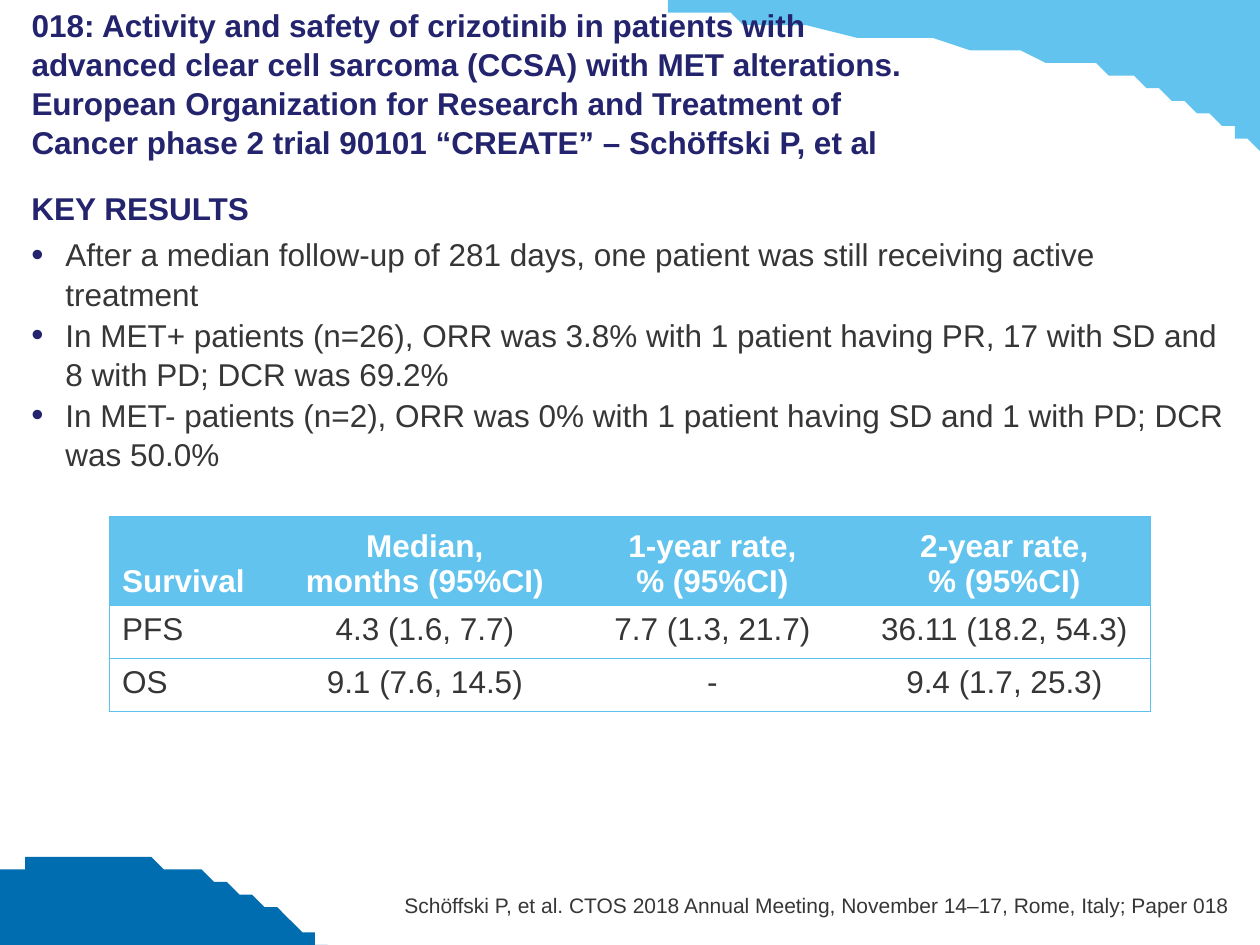
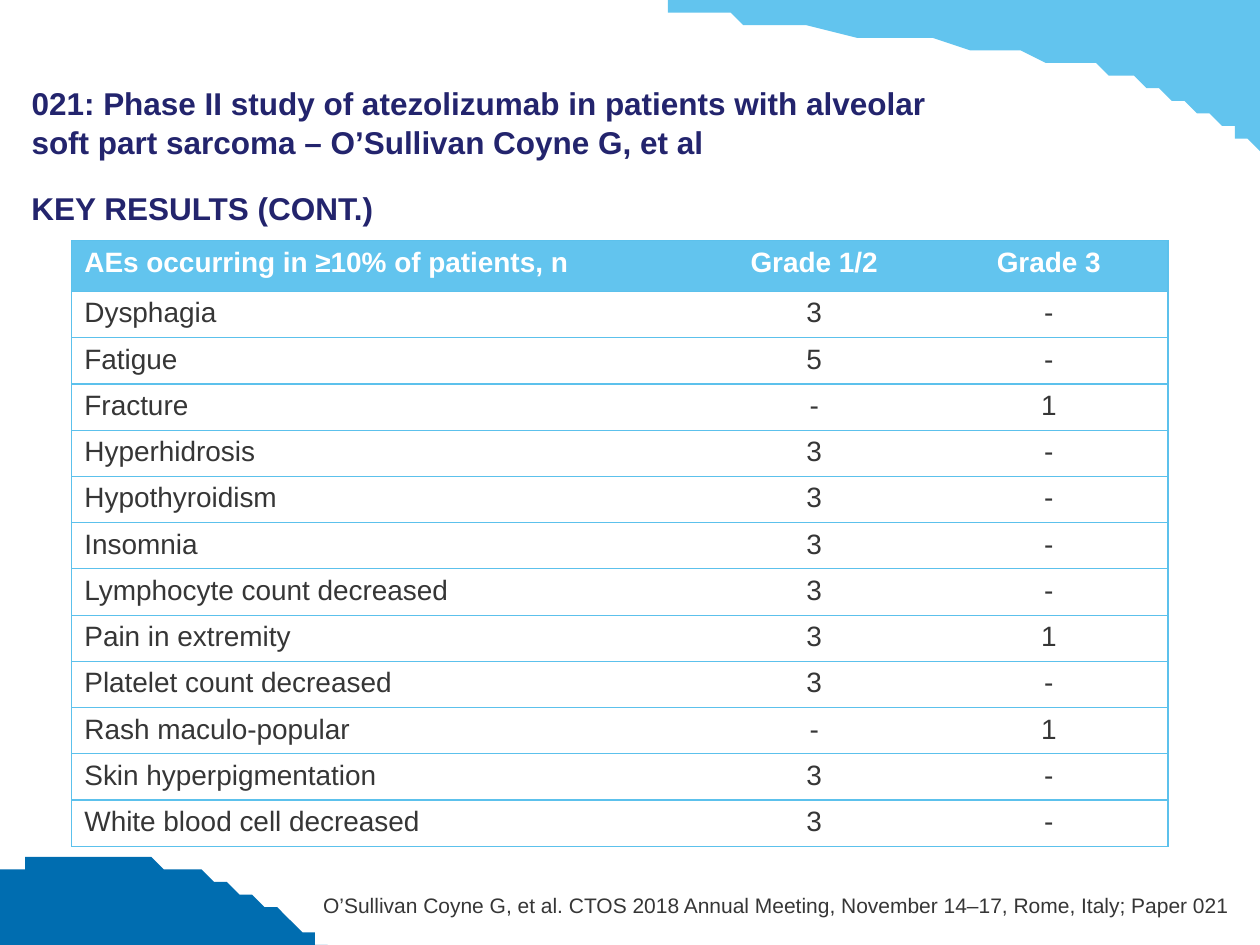
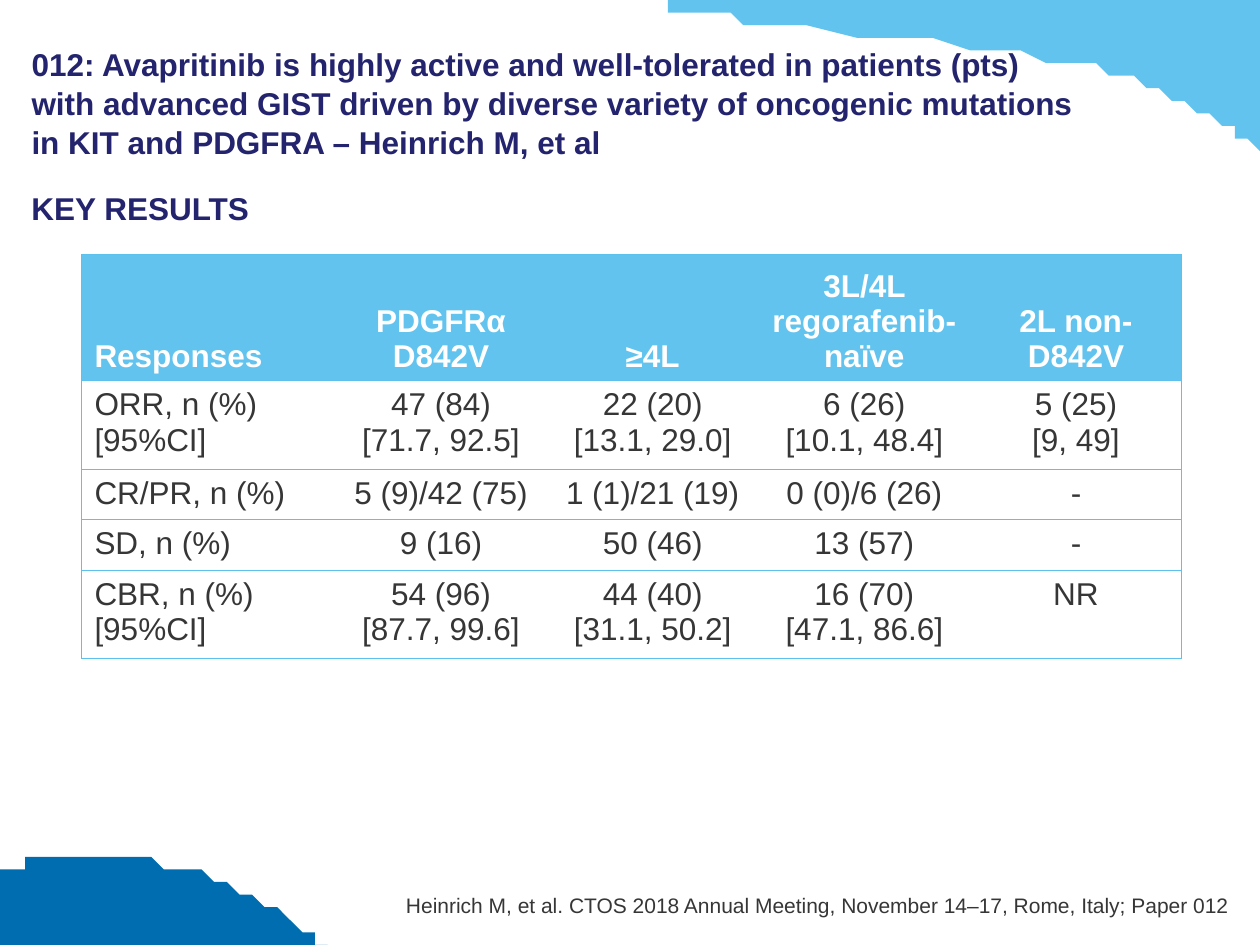
from dataclasses import dataclass

import pptx
import pptx.dml.color
import pptx.enum.text
import pptx.oxml
import pptx.oxml.ns
import pptx.util

ALIGN = pptx.enum.text.PP_ALIGN
ANCHOR = pptx.enum.text.MSO_ANCHOR

# The slide is a grid of 100 columns by 75 rows
COLUMNS, ROWS = 100, 75
UNIT = pptx.util.Inches(0.1)


@dataclass(frozen=True)
class Theme:
    font: str = "Arial"
    heading: str = "23246D"
    text: str = "363636"
    light: str = "FFFFFF"
    sky: str = "62C4EE"
    ocean: str = "006DB0"
    rule: str = "5CC1EC"
    rule_width: float = 0.75
    body_size: int = 18
    dense_size: int = 16
    footer_size: int = 12
    leading: float = 1.04


@dataclass(frozen=True)
class Box:
    """A rectangle in grid columns and rows."""
    left: float
    top: float
    width: float
    height: float

    def emu(self):
        return [round(v * UNIT) for v in (self.left, self.top, self.width, self.height)]


THEME = Theme()
FOOTER_BOX = Box(22.6, 70.8, 75, 2)
BODY_BOX = Box(2.5, 14.4, 95, 58.1)
TITLE_BOX = Box(2.5, 2.5, 73.1, 10.3)
WIDE_TITLE_BOX = Box(2.5, 2.5, 83.9, 10.3)

# Outlines relative to their box: one point is a line, three are a curve
UPPER_BOX = Box(51.5, 0, 48.5, 11.9)
UPPER_WAVE = [
    [(48.5, 0)], [(48.5, 11.9)], [(47.8, 11.2)],
    [(47.4, 10.9), (47.1, 10.6), (46.7, 10.3)],
    [(40.2, 6.2), (34.9, 4.3), (9.3, 1.8)],
    [(6.2, 1.5), (3.4, 0.9), (0.8, 0.2)],
]
LOWER_BOX = Box(0, 67.7, 25.5, 7.3)
LOWER_WAVE = [
    [(14.5, -0.2), (21.8, 4.2), (25.2, 7)],
    [(25.5, 7.3)], [(0, 7.3)], [(0, 1.5)], [(0.9, 1.1)],
    [(2.8, 0.4), (4.8, 0), (6.7, 0)],
]


def rgb(colour):
    return pptx.dml.color.RGBColor.from_string(colour)


def format_runs(paragraph, size, colour, bold=False):
    for run in paragraph.runs:
        run.font.name = THEME.font
        run.font.size = pptx.util.Pt(size)
        run.font.bold = bold
        run.font.color.rgb = rgb(colour)


def set_frame(frame, anchor, top=0.0, bottom=0.0):
    frame.word_wrap = True
    frame.auto_size = pptx.enum.text.MSO_AUTO_SIZE.NONE
    frame.vertical_anchor = anchor
    frame.margin_left = frame.margin_right = 0
    frame.margin_top = pptx.util.Inches(top)
    frame.margin_bottom = pptx.util.Inches(bottom)


# Shared bands
def trace(start, segments, steps=20):
    """Turn lines and cubic curves into points."""
    points = [start]
    for segment in segments:
        if len(segment) == 1:
            points += segment
            continue
        controls = [points[-1], *segment]
        for step in range(1, steps + 1):
            t = step / steps
            weights = ((1 - t) ** 3, 3 * t * (1 - t) ** 2, 3 * t * t * (1 - t), t ** 3)
            points.append(tuple(sum(w * c[axis] for w, c in zip(weights, controls))
                                for axis in (0, 1)))
    return points


def add_wave(slide, box, start, segments, colour):
    """Draw a band and move it to the layout, behind the title."""
    points = [(box.left + x, box.top + y) for x, y in trace(start, segments)]
    builder = slide.shapes.build_freeform(*points[0], scale=float(UNIT))
    builder.add_line_segments(points[1:], close=True)
    wave = builder.convert_to_shape()
    wave.shadow.inherit = False
    wave.fill.solid()
    wave.fill.fore_color.rgb = rgb(colour)
    wave.line.fill.background()
    slide.slide_layout.shapes.element.insert(2, wave._element)


# Text regions
def add_title(slide, box, wording):
    title = slide.shapes.title
    title.left, title.top, title.width, title.height = box.emu()
    set_frame(title.text_frame, ANCHOR.BOTTOM, top=0.05)
    title.text_frame.text = wording
    paragraph = title.text_frame.paragraphs[0]
    paragraph.alignment = ALIGN.LEFT
    paragraph.line_spacing = THEME.leading
    format_runs(paragraph, THEME.body_size, THEME.heading, bold=True)


def add_bullet(paragraph):
    properties = paragraph._p.get_or_add_pPr()
    indent = pptx.util.Inches(0.27)
    properties.set("marL", str(indent))
    properties.set("indent", str(-indent))
    namespace = pptx.oxml.ns.nsdecls("a")
    for xml in (f'<a:buClr {namespace}><a:srgbClr val="{THEME.heading}"/></a:buClr>',
                f'<a:buSzPct {namespace} val="110000"/>',
                f'<a:buFont {namespace} typeface="{THEME.font}"/>',
                f'<a:buChar {namespace} char="•"/>'):
        properties.append(pptx.oxml.parse_xml(xml))


def add_findings(slide, box, heading, findings):
    frame = slide.shapes.add_textbox(*box.emu()).text_frame
    set_frame(frame, ANCHOR.TOP, top=0.05, bottom=0.05)
    frame.text = "\n".join([heading, *findings])
    for index, paragraph in enumerate(frame.paragraphs):
        is_heading = index == 0
        paragraph.line_spacing = THEME.leading
        paragraph.space_after = pptx.util.Pt(4 if is_heading else 1)
        format_runs(paragraph, THEME.body_size,
                    THEME.heading if is_heading else THEME.text, bold=is_heading)
        if not is_heading:
            add_bullet(paragraph)


def add_citation(slide, box, authors, paper):
    frame = slide.shapes.add_textbox(*box.emu()).text_frame
    set_frame(frame, ANCHOR.BOTTOM)
    frame.text = (f"{authors}, et al. CTOS 2018 Annual Meeting, "
                  f"November 14–17, Rome, Italy; Paper {paper}")
    frame.paragraphs[0].alignment = ALIGN.RIGHT
    format_runs(frame.paragraphs[0], THEME.footer_size, THEME.text)


# Tables
def set_borders(cell, visible):
    properties = cell._tc.get_or_add_tcPr()
    for side in "LRTB":
        paint = (f'<a:solidFill><a:srgbClr val="{THEME.rule}"/></a:solidFill>'
                 if side in visible else "<a:noFill/>")
        properties.append(pptx.oxml.parse_xml(
            f'<a:ln{side} {pptx.oxml.ns.nsdecls("a")} '
            f'w="{pptx.util.Pt(THEME.rule_width)}">{paint}</a:ln{side}>'))


def format_cell(cell, wording, is_header, is_first, is_last, size):
    set_borders(cell, "TB" + "L" * is_first + "R" * is_last)
    if is_header:
        cell.fill.solid()
        cell.fill.fore_color.rgb = rgb(THEME.sky)
    else:
        cell.fill.background()
    cell.vertical_anchor = ANCHOR.BOTTOM if is_header and size == THEME.body_size else ANCHOR.TOP
    paragraph = cell.text_frame.paragraphs[0]
    paragraph.text = wording
    paragraph.alignment = ALIGN.LEFT if is_first else ALIGN.CENTER
    format_runs(paragraph, size, THEME.light if is_header else THEME.text, bold=is_header)


def add_results(slide, box, rows, column_weights, row_weights, size):
    """Share the box among columns and rows by weight."""
    grid = slide.shapes.add_table(len(rows), len(column_weights), *box.emu()).table
    for column, weight in zip(grid.columns, column_weights):
        column.width = round(box.width * UNIT * weight / sum(column_weights))
    for row, weight in zip(grid.rows, row_weights):
        row.height = round(box.height * UNIT * weight / sum(row_weights))
    last = len(column_weights) - 1
    for r, row in enumerate(rows):
        for c, wording in enumerate(row):
            format_cell(grid.cell(r, c), wording, r == 0, c == 0, c == last, size)


# Content
SURVIVAL = [
    ("Survival", "Median,\nmonths (95%CI)", "1-year rate,\n% (95%CI)", "2-year rate,\n% (95%CI)"),
    ("PFS", "4.3 (1.6, 7.7)", "7.7 (1.3, 21.7)", "36.11 (18.2, 54.3)"),
    ("OS", "9.1 (7.6, 14.5)", "-", "9.4 (1.7, 25.3)"),
]
ADVERSE_EVENTS = [
    ("AEs occurring in ≥10% of patients, n", "Grade 1/2", "Grade 3"),
    ("Dysphagia", "3", "-"),
    ("Fatigue", "5", "-"),
    ("Fracture", "-", "1"),
    ("Hyperhidrosis", "3", "-"),
    ("Hypothyroidism", "3", "-"),
    ("Insomnia", "3", "-"),
    ("Lymphocyte count decreased", "3", "-"),
    ("Pain in extremity", "3", "1"),
    ("Platelet count decreased", "3", "-"),
    ("Rash maculo-popular", "-", "1"),
    ("Skin hyperpigmentation", "3", "-"),
    ("White blood cell decreased", "3", "-"),
]
RESPONSES = [
    ("Responses", "PDGFRα D842V", "≥4L", "3L/4L regorafenib- naïve", "2L non-D842V"),
    ("ORR, n (%) [95%CI]", "47 (84)\n[71.7, 92.5]", "22 (20)\n[13.1, 29.0]",
     "6 (26)\n[10.1, 48.4]", "5 (25)\n[9, 49]"),
    ("CR/PR, n (%)", "5 (9)/42 (75)", "1 (1)/21 (19)", "0 (0)/6 (26)", "-"),
    ("SD, n (%)", "9 (16)", "50 (46)", "13 (57)", "-"),
    ("CBR, n (%) [95%CI]", "54 (96)\n[87.7, 99.6]", "44 (40)\n[31.1, 50.2]",
     "16 (70)\n[47.1, 86.6]", "NR"),
]

STUDIES = [
    dict(
        paper="018", authors="Schöffski P", title_box=TITLE_BOX,
        subject="Activity and safety of crizotinib in patients with advanced clear cell "
                "sarcoma (CCSA) with MET alterations. European Organization for Research "
                "and Treatment of Cancer phase 2 trial 90101 “CREATE”",
        heading="KEY RESULTS",
        findings=[
            "After a median follow-up of 281 days, one patient was still receiving active treatment",
            "In MET+ patients (n=26), ORR was 3.8% with 1 patient having PR, 17 with SD "
            "and 8 with PD; DCR was 69.2%",
            "In MET- patients (n=2), ORR was 0% with 1 patient having SD and 1 with PD; "
            "DCR was 50.0%",
        ],
        results=dict(box=Box(8.7, 41, 82.6, 15.5), rows=SURVIVAL, size=THEME.body_size,
                     column_weights=[1.38, 2.25, 2.32, 2.32], row_weights=[0.7, 0.42, 0.42]),
    ),
    dict(
        paper="021", authors="O’Sullivan Coyne G", title_box=TITLE_BOX,
        subject="Phase II study of atezolizumab in patients with alveolar soft part sarcoma",
        heading="KEY RESULTS (CONT.)", findings=[],
        results=dict(box=Box(5.7, 19.1, 87, 48.1), rows=ADVERSE_EVENTS, size=THEME.dense_size,
                     column_weights=[4.97, 1.83, 1.89], row_weights=[1.1] + [1] * 12),
    ),
    dict(
        paper="012", authors="Heinrich M", title_box=WIDE_TITLE_BOX,
        subject="Avapritinib is highly active and well-tolerated in patients (pts) with "
                "advanced GIST driven by diverse variety of oncogenic mutations in KIT and PDGFRA",
        heading="KEY RESULTS", findings=[],
        results=dict(box=Box(6.5, 20.2, 87.3, 32.1), rows=RESPONSES, size=THEME.body_size,
                     column_weights=[2.01] + [1.68] * 4,
                     row_weights=[1, 0.7, 0.4, 0.4, 0.7]),
    ),
]


def add_study(slide, study):
    paper, authors = study["paper"], study["authors"]
    add_title(slide, study["title_box"], f"{paper}: {study['subject']} – {authors}, et al")
    add_findings(slide, BODY_BOX, study["heading"], study["findings"])
    add_citation(slide, FOOTER_BOX, authors, paper)
    add_results(slide, **study["results"])


def main():
    deck = pptx.Presentation()
    deck.slide_width, deck.slide_height = COLUMNS * UNIT, ROWS * UNIT
    title_only = deck.slide_layouts[5]
    slides = [deck.slides.add_slide(title_only) for _ in STUDIES]
    add_wave(slides[0], UPPER_BOX, (0, 0), UPPER_WAVE, THEME.sky)
    add_wave(slides[0], LOWER_BOX, (6.7, 0), LOWER_WAVE, THEME.ocean)
    for slide, study in zip(slides, STUDIES):
        add_study(slide, study)
    deck.save("out.pptx")


if __name__ == "__main__":
    main()
